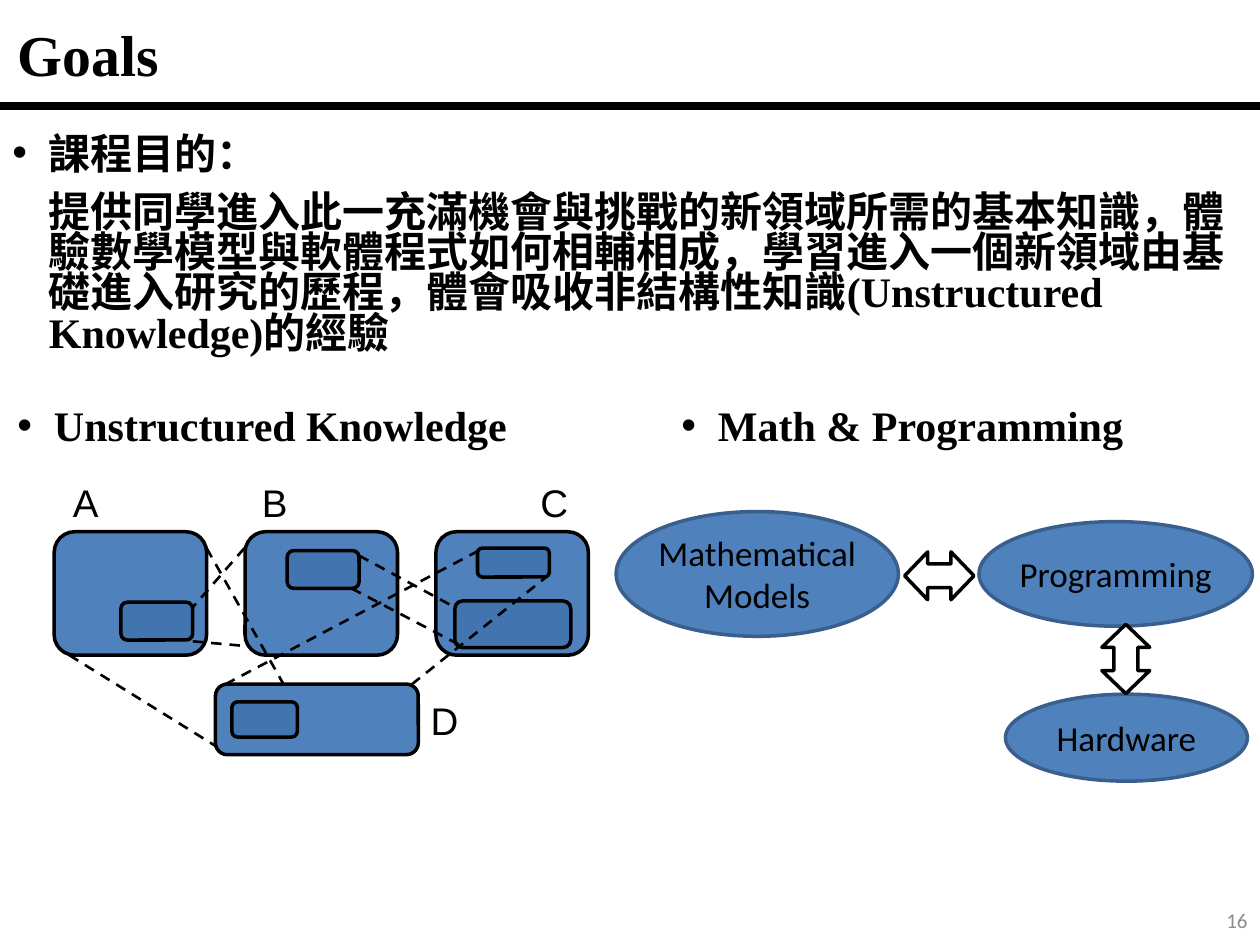
from dataclasses import dataclass
from lxml.etree import SubElement
from pptx import Presentation
from pptx.dml.color import RGBColor
from pptx.enum.dml import MSO_LINE
from pptx.enum.shapes import MSO_CONNECTOR, MSO_SHAPE
from pptx.enum.text import MSO_ANCHOR, PP_ALIGN
from pptx.oxml.ns import qn
from pptx.util import Inches, Pt


@dataclass(frozen=True)
class Theme:
    ink: str = "000000"
    paper: str = "FFFFFF"
    block: str = "4F81BD"
    inner: str = "4274AF"
    rim: str = "3A5F8C"
    muted: str = "8C8C8C"
    serif: str = "Times New Roman"
    sans: str = "Arial"
    body: str = "Calibri"
    title: int = 33
    text: int = 24
    label: int = 22
    node: int = 20
    number: int = 12


theme = Theme()
prs = Presentation()
prs.slide_width, prs.slide_height = Inches(10), Inches(7.5)
COL, ROW = prs.slide_width / 100, prs.slide_height / 75
s = prs.slides.add_slide(prs.slide_layouts[6])


def write(sp, lines, size, font, color=theme.ink, bold=False, align=PP_ALIGN.LEFT,
          anchor=MSO_ANCHOR.TOP, wrap=True, spacing=None):
    tf = sp.text_frame
    tf.word_wrap = wrap
    tf.vertical_anchor = anchor
    for i, line in enumerate(lines):
        p = tf.paragraphs[0] if i == 0 else tf.add_paragraph()
        p.alignment = align
        p.line_spacing = spacing
        r = p.add_run()
        r.text = line
        r.font.size, r.font.name, r.font.bold = Pt(size), font, bold
        r.font.color.rgb = RGBColor.from_string(color)
    return tf


def add(shapes, kind, x, y, w, h, fill=None, line=theme.ink):
    at = [int(v) for v in (x * COL, y * ROW, w * COL, h * ROW)]
    if kind is None:
        return shapes.add_textbox(*at)
    sp = shapes.add_shape(kind, *at)
    sp.shadow.inherit = False
    sp.fill.solid()
    sp.fill.fore_color.rgb = RGBColor.from_string(fill)
    sp.line.color.rgb = RGBColor.from_string(line)
    sp.line.width = Pt(2)
    return sp


title = add(s.shapes, None, 0.4, 1.3, 90, 6.9)
write(title, ["Goals"], theme.title, theme.serif, bold=True, anchor=MSO_ANCHOR.MIDDLE, spacing=0.8)

aim = ("提供同學進入此一充滿機會與挑戰的新領域所需的基本知識，體驗數學模型與軟體程式如何相輔相成，"
       "學習進入一個新領域由基礎進入研究的歷程，體會吸收非結構性知識(Unstructured Knowledge)的經驗")
for x, y, w, h, lines in [
    (0, 10.4, 100, 18.6, ["課程目的：", aim]),
    (0.4, 32, 41.7, 4.2, ["Unstructured Knowledge"]),
    (53.1, 32, 37.4, 4.2, ["Math & Programming"]),
]:
    box = add(s.shapes, None, x, y, w, h)
    tf = write(box, lines, theme.text, theme.serif, bold=True, spacing=0.8)
    for i, p in enumerate(tf.paragraphs):
        p.space_before = Pt(10 * i)
        pPr = p._p.get_or_add_pPr()
        pPr.set("marL", str(Inches(0.29)))
        pPr.set("indent", str(Inches(-0.29 if i == 0 else 0)))
        if i == 0:
            SubElement(pPr, qn("a:buFont")).set("typeface", theme.sans)
            SubElement(pPr, qn("a:buChar")).set("char", "•")

knowledge = s.shapes.add_group_shape().shapes
blocks = [(4.3 + 15.15 * i, 42.2, 12.1, 9.8) for i in range(3)] + [(17.1, 54.3, 16.1, 5.6)]
parts = [
    (9.6, 47.8, 5.7, 3),
    (22.8, 43.7, 5.7, 3),
    (36.1, 47.7, 9.2, 3.7),
    (37.9, 43.5, 5.7, 2.3),
    (18.4, 55.7, 5.2, 2.8),
]
for fill, cells in ((theme.block, blocks), (theme.inner, parts)):
    for cell in cells:
        add(knowledge, MSO_SHAPE.ROUNDED_RECTANGLE, *cell, fill)

rule = [(s.shapes, 4.5, None, (0, 8.4, 100, 8.4))]
links = [(knowledge, 1.5, MSO_LINE.DASH, ends) for ends in (
    (16.4, 43.5, 22.5, 54.3),
    (5.5, 52, 17.1, 59.2),
    (28.5, 44.1, 36.1, 48.2),
    (27.9, 46.7, 36.5, 51.2),
    (38, 43.7, 17.9, 54.3),
    (43.6, 45.6, 32.7, 54.3),
    (19.4, 43.5, 15.3, 48.2),
    (15.3, 50.9, 19.8, 51.3),
)]
for shapes, width, dash, (x1, y1, x2, y2) in rule + links:
    ends = [int(v) for v in (x1 * COL, y1 * ROW, x2 * COL, y2 * ROW)]
    c = shapes.add_connector(MSO_CONNECTOR.STRAIGHT, *ends)
    c.line.color.rgb = RGBColor.from_string(theme.ink)
    c.line.width = Pt(width)
    c.line.dash_style = dash
    SubElement(c._element.spPr, qn("a:effectLst"))

for name, x, y in [("A", 4.8, 37.5), ("B", 19.8, 37.5), ("C", 41.9, 37.5), ("D", 33.2, 54.8)]:
    write(add(knowledge, None, x, y, 3.4, 3.8), [name], theme.label, theme.sans, wrap=False)

flow = s.shapes.add_group_shape().shapes
for lines, cell in [
    (["Mathematical", "Models"], (48.9, 40.6, 22.4, 9.9)),
    (["Programming"], (77.7, 41.4, 21.7, 8.3)),
    (["Hardware"], (79.8, 55.1, 19.2, 6.9)),
]:
    sp = add(flow, MSO_SHAPE.OVAL, *cell, theme.block, theme.rim)
    tf = write(sp, lines, theme.node, theme.body, align=PP_ALIGN.CENTER, anchor=MSO_ANCHOR.MIDDLE)
    tf.margin_left = tf.margin_right = tf.margin_top = tf.margin_bottom = 0

for x, y, turn in [(71.8, 43.8, 0), (86.6, 50.4, 90)]:
    sp = add(flow, MSO_SHAPE.LEFT_RIGHT_ARROW, x, y, 5.5, 3.8, theme.paper)
    sp.adjustments[0], sp.adjustments[1] = 0.5, 0.48
    sp.rotation = turn

number = add(s.shapes, None, 77.5, 71, 22.5, 4)
write(number, ["16"], theme.number, theme.body, theme.muted, align=PP_ALIGN.RIGHT, anchor=MSO_ANCHOR.MIDDLE)

prs.save("out.pptx")
